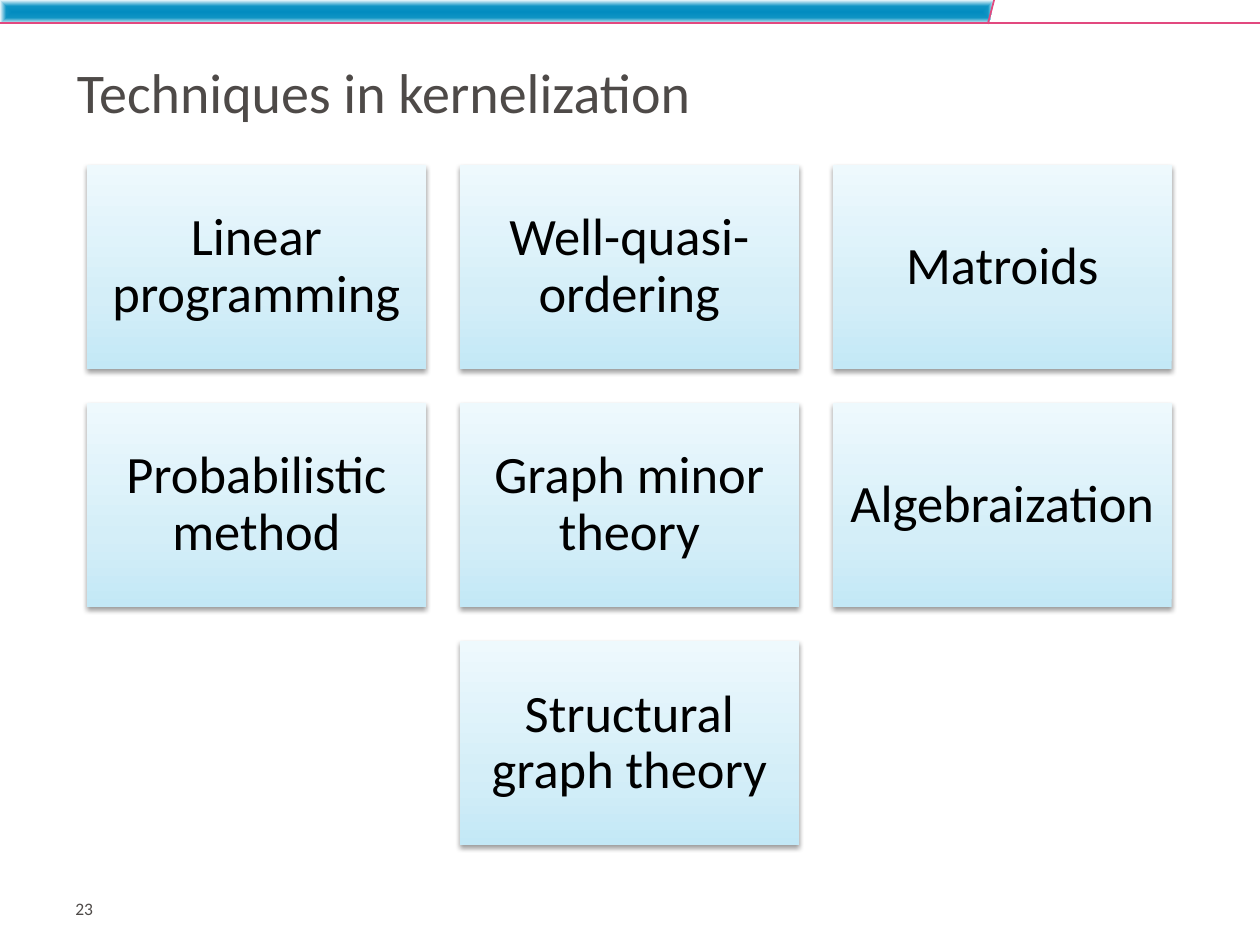
"""Build the slide on kernelization techniques."""
from dataclasses import dataclass

from lxml import etree
from pptx import Presentation
from pptx.dml.color import RGBColor
from pptx.enum.shapes import MSO_CONNECTOR, MSO_SHAPE
from pptx.enum.text import MSO_ANCHOR, PP_ALIGN
from pptx.oxml import parse_xml
from pptx.oxml.ns import nsdecls, qn
from pptx.util import Inches, Pt

RECT = MSO_SHAPE.RECTANGLE
LINE = MSO_CONNECTOR.STRAIGHT
MIDDLE, TOP = MSO_ANCHOR.MIDDLE, MSO_ANCHOR.TOP
LEFT, CENTER = PP_ALIGN.LEFT, PP_ALIGN.CENTER
TITLE_ONLY = 5


@dataclass(frozen=True)
class Theme:
    font: str = "Calibri"
    ink: str = "4E4A48"
    black: str = "000000"
    pink: str = "E2497F"
    title: int = 32
    card: int = 30
    small: int = 10
    band: tuple = ((0, "038CC0"), (49, "0F94C4"), (100, "EEF9FD"))
    fade: tuple = ((0, "C3E8F6"), (35, "D4EEF8"), (100, "EEF9FD"))


@dataclass(frozen=True)
class Grid:
    left: float = 0.69
    top: float = 1.31
    wide: float = 2.69
    high: float = 1.62
    gap: float = 0.27

    def place(self, col: int, row: int) -> tuple:
        x = self.left + col * (self.wide + self.gap)
        y = self.top + row * (self.high + self.gap)
        return tuple(Inches(n) for n in (x, y, self.wide, self.high))


@dataclass(frozen=True)
class Card:
    text: str
    col: int
    row: int


THEME = Theme()
GRID = Grid()
CARDS = (
    Card("Linear programming", 0, 0),
    Card("Well-quasi-ordering", 1, 0),
    Card("Matroids", 2, 0),
    Card("Probabilistic method", 0, 1),
    Card("Graph minor theory", 1, 1),
    Card("Algebraization", 2, 1),
    Card("Structural graph theory", 1, 2),
)
SHADE = (
    f'<a:outerShdw {nsdecls("a")} blurRad="{Pt(3.1)}" dist="{Pt(1.6)}" '
    'dir="5400000" rotWithShape="0"><a:srgbClr val="000000">'
    '<a:alpha val="38000"/></a:srgbClr></a:outerShdw>'
)
UPWARD = '<a:lin ang="16200000" scaled="0"/>'
INWARD = (
    '<a:path path="shape"><a:fillToRect l="50000" t="50000" '
    'r="50000" b="50000"/></a:path>'
)


def blend(shape, stops: tuple, course: str) -> None:
    """Fill a shape with a gradient and drop its line and shadow."""
    shape.fill.gradient()
    old = shape.element.spPr.find(qn("a:gradFill"))
    marks = "".join(
        f'<a:gs pos="{at * 1000}"><a:srgbClr val="{tint}"/></a:gs>'
        for at, tint in stops
    )
    new = parse_xml(
        f'<a:gradFill {nsdecls("a")} rotWithShape="1">'
        f"<a:gsLst>{marks}</a:gsLst>{course}</a:gradFill>"
    )
    old.getparent().replace(old, new)
    shape.line.fill.background()
    shape.shadow.inherit = False


def write(shape, text: str, size: int, tint: str, align, anchor, pads: tuple) -> None:
    """Set and format the text of a shape."""
    frame = shape.text_frame
    frame.text = text
    frame.word_wrap = True
    frame.vertical_anchor = anchor
    (frame.margin_left, frame.margin_top,
     frame.margin_right, frame.margin_bottom) = (Inches(n) for n in pads)
    para = frame.paragraphs[0]
    para.alignment = align
    font = para.runs[0].font
    font.name, font.size = THEME.font, Pt(size)
    font.color.rgb = RGBColor.from_string(tint)


def rule(slide, start: tuple, end: tuple) -> None:
    """Draw a thin header line."""
    ends = (Inches(n) for n in (*start, *end))
    line = slide.shapes.add_connector(LINE, *ends)
    line.line.color.rgb = RGBColor.from_string(THEME.pink)
    line.line.width = Pt(1)
    etree.SubElement(line.element.spPr, qn("a:effectLst"))


def header(slide) -> None:
    """Draw the slanted band and its two lines."""
    pen = slide.shapes.build_freeform(0, 0)
    spots = ((7.89, 0), (7.85, 0.19), (0, 0.19))
    pen.add_line_segments([(Inches(x), Inches(y)) for x, y in spots], close=True)
    blend(pen.convert_to_shape(), THEME.band, INWARD)
    rule(slide, (7.89, 0), (7.84, 0.19))
    rule(slide, (10, 0.18), (0, 0.18))


def draw(slide, card: Card) -> None:
    """Draw one technique card in its grid cell."""
    box = slide.shapes.add_shape(RECT, *GRID.place(card.col, card.row))
    blend(box, THEME.fade, UPWARD)
    box.element.spPr.find(qn("a:effectLst")).append(parse_xml(SHADE))
    write(box, card.text, THEME.card, THEME.black, CENTER, MIDDLE, (0.12,) * 4)
    box.text_frame.paragraphs[0].line_spacing = 0.9


def main() -> None:
    """Assemble and save the slide."""
    deck = Presentation()
    deck.slide_width, deck.slide_height = Inches(10), Inches(7.5)
    slide = deck.slides.add_slide(deck.slide_layouts[TITLE_ONLY])
    header(slide)
    title = slide.shapes.title
    title.left, title.top, title.width, title.height = (
        Inches(n) for n in (0.51, 0.38, 9, 0.69))
    write(title, "Techniques in kernelization", THEME.title, THEME.ink,
          LEFT, MIDDLE, (0.1, 0.05, 0.1, 0.05))
    for card in CARDS:
        draw(slide, card)
    page = slide.shapes.add_textbox(*(Inches(n) for n in (0.5, 7.13, 2.14, 0.3)))
    write(page, "23", THEME.small, THEME.ink, LEFT, TOP, (0.1, 0, 0.1, 0.05))
    deck.save("out.pptx")


if __name__ == "__main__":
    main()
